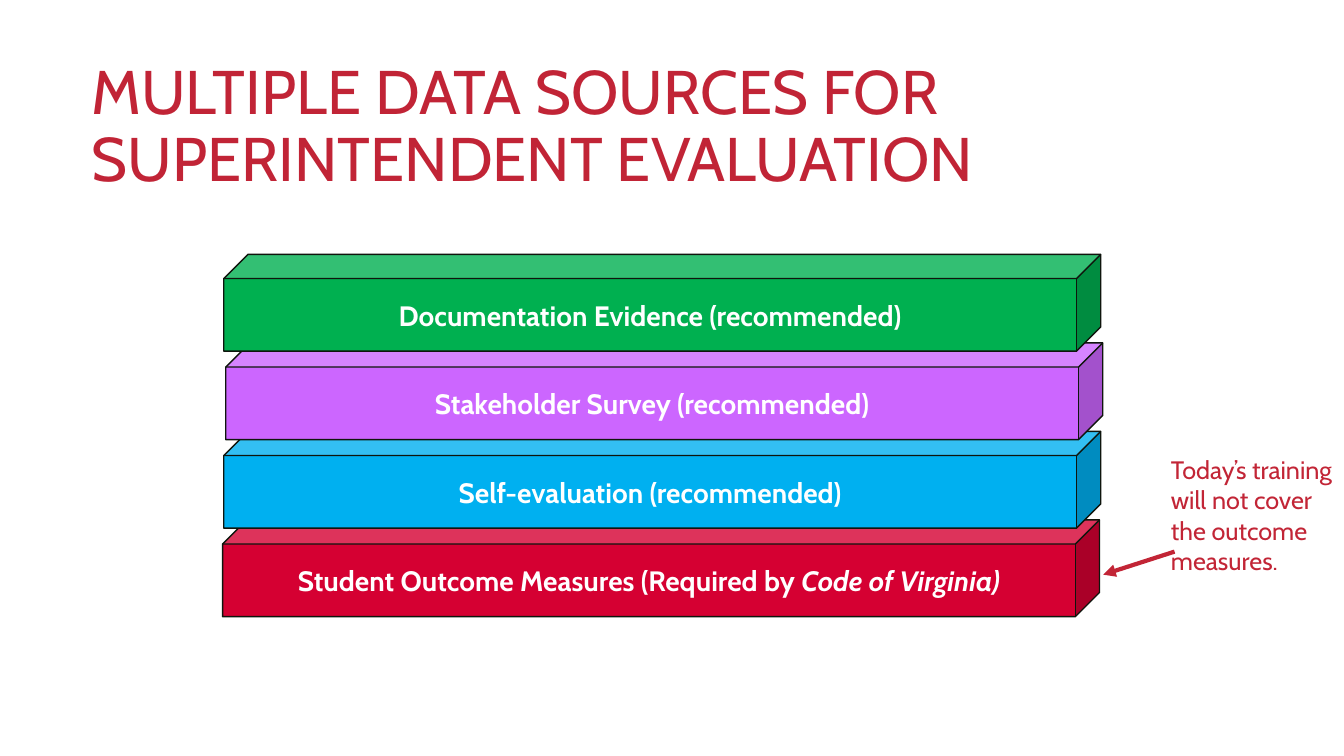
from lxml import etree
from pptx import Presentation
from pptx.dml.color import RGBColor as RGB
from pptx.enum.shapes import MSO_CONNECTOR as LINK, MSO_SHAPE as SHAPE
from pptx.enum.text import MSO_ANCHOR as ANCHOR, PP_ALIGN as ALIGN
from pptx.oxml.ns import qn
from pptx.util import Cm, Pt

WHITE = RGB(0xFF, 0xFF, 0xFF)
INK = RGB(0x0F, 0x15, 0x0D)
TITLE = RGB(0xC1, 0x24, 0x36)
NOTE = RGB(0xC2, 0x25, 0x36)
RED = RGB(0xD5, 0x00, 0x32)
BLUE = RGB(0x00, 0xB0, 0xF0)
PURPLE = RGB(0xCC, 0x66, 0xFF)
GREEN = RGB(0x00, 0xB0, 0x50)


def add_run(para, text, color, **form):
    run = para.add_run()
    run.text = text
    run.font.color.rgb = color
    for key, value in {"name": "Cabin", **form}.items():
        setattr(run.font, key, value)


def add_note(left, top, width, height, text, color, size):
    """Add a wrapped text box and return its paragraph."""
    box = slide.shapes.add_textbox(Cm(left), Cm(top), Cm(width), Cm(height))
    box.text_frame.word_wrap = True
    para = box.text_frame.paragraphs[0]
    add_run(para, text, color, size=Pt(size))
    return para


deck = Presentation()
deck.slide_width, deck.slide_height = Cm(33.87), Cm(19.05)
slide = deck.slides.add_slide(deck.slide_layouts[6])

# Stack of blocks, from the bottom up: left, fill, text, italic text
blocks = [
    (5.61, RED, "Student Outcome Measures (Required by ", "Code of Virginia)"),
    (5.64, BLUE, "Self-evaluation (recommended)", ""),
    (5.69, PURPLE, "Stakeholder Survey (recommended)", ""),
    (5.64, GREEN, "Documentation Evidence (recommended)", ""),
]
stack = slide.shapes.add_group_shape()
for row, (left, fill, text, slant) in enumerate(blocks):
    cube = stack.shapes.add_shape(
        SHAPE.CUBE, Cm(left), Cm(13.1 - 2.23 * row), Cm(22.1), Cm(2.44))
    cube.shadow.inherit = False
    cube.fill.solid()
    cube.fill.fore_color.rgb = fill
    cube.line.color.rgb = INK
    cube.line.width = Pt(1)
    frame = cube.text_frame
    frame.word_wrap = True
    frame.vertical_anchor = ANCHOR.MIDDLE
    para = frame.paragraphs[0]
    para.alignment = ALIGN.CENTER
    add_run(para, text, WHITE, size=Pt(20), bold=True)
    if slant:
        add_run(para, slant, WHITE, size=Pt(20), bold=True, italic=True)

title = add_note(2.06, 1.42, 29.2, 3.68,
                 "MULTIPLE DATA SOURCES FOR SUPERINTENDENT EVALUATION", TITLE, 44)
title.line_spacing = 0.9

arrow = slide.shapes.add_connector(
    LINK.STRAIGHT, Cm(29.6), Cm(13.9), Cm(27.8), Cm(14.48))
arrow.line.color.rgb = NOTE
arrow.line.width = Pt(3)
etree.SubElement(arrow.line._get_or_add_ln(), qn("a:tailEnd"), type="triangle")
etree.SubElement(arrow._element.spPr, qn("a:effectLst"))

add_note(29.26, 11.33, 5, 4.11,
         "Today’s training will not cover the outcome measures.", NOTE, 18)

deck.save("out.pptx")
